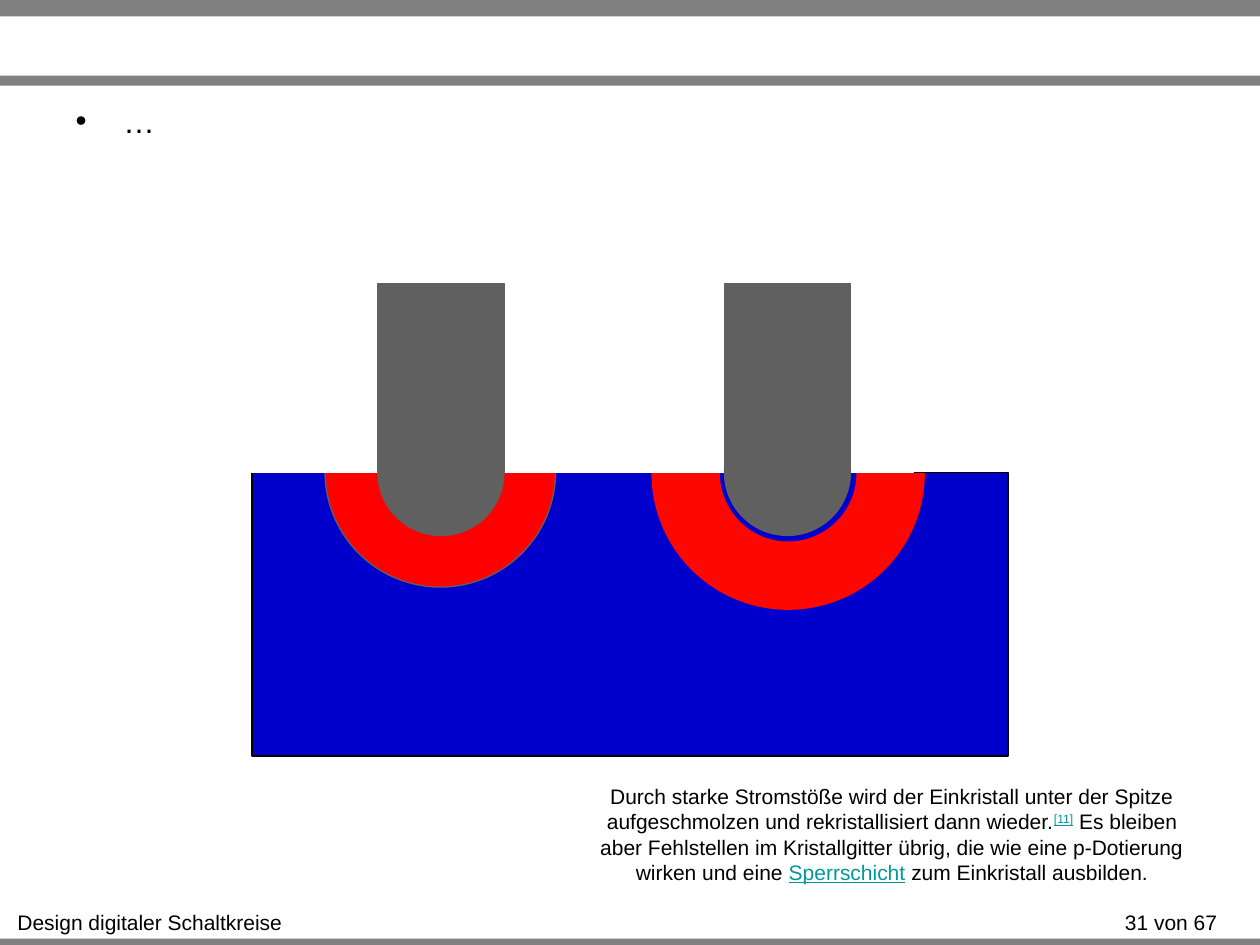
from dataclasses import dataclass

from pptx import Presentation
from pptx import util as u
from pptx.dml.color import RGBColor
from pptx.enum import shapes, text
from pptx.oxml.ns import qn
from lxml import etree

SHAPE = shapes.MSO_SHAPE


@dataclass(frozen=True)
class Theme:
    font: str = "Arial"
    body: int = 18
    small: int = 12
    ink: str = "000000"
    paper: str = "FFFFFF"
    bar: str = "808080"
    crystal: str = "0000CC"
    tip: str = "606060"
    doped: str = "FF0000"
    barrier: str = "FF0701"
    link: str = "009999"


def add_run(p, content, size, color, font, underline=None, baseline=None):
    r = p.add_run()
    r.text = content
    r.font.name, r.font.size = font, u.Pt(size)
    r.font.color.rgb = RGBColor.from_string(color)
    r.font.underline = underline
    if baseline:
        r.font._element.set("baseline", str(baseline * 1000))
    return r


class SlideBuilder:
    """Draw styled elements on one slide."""

    def __init__(self, slide, theme):
        self.s, self.t = slide, theme

    def shape(self, kind, x, y, w, h, fill, line=None, rotation=0):
        sp = self.s.shapes.add_shape(kind, *map(u.Inches, (x, y, w, h)))
        sp.shadow.inherit = False
        sp.rotation = rotation
        sp.fill.solid()
        sp.fill.fore_color.rgb = RGBColor.from_string(fill)
        if line:
            sp.line.color.rgb = RGBColor.from_string(line)
            sp.line.width = u.Pt(0.75)
        else:
            sp.line.fill.background()
        return sp

    def textbox(self, x, y, w, h, runs, wrap=True):
        sp = self.s.shapes.add_textbox(*map(u.Inches, (x, y, w, h)))
        tf = sp.text_frame
        tf.word_wrap = wrap
        tf.auto_size = text.MSO_AUTO_SIZE.SHAPE_TO_FIT_TEXT
        p = tf.paragraphs[0]
        p.alignment = text.PP_ALIGN.CENTER
        for content, style in runs:
            add_run(p, content, **{"size": self.t.small, "color": self.t.ink,
                                   "font": self.t.font, **style})
        return sp

    def body(self, x, y, w, h, content):
        self.s.shapes.title._element.getparent().remove(self.s.shapes.title._element)
        sp = self.s.placeholders[1]
        sp.left, sp.top, sp.width, sp.height = map(u.Inches, (x, y, w, h))
        tf = sp.text_frame
        tf.auto_size = text.MSO_AUTO_SIZE.NONE
        tf.vertical_anchor = text.MSO_ANCHOR.TOP
        p = tf.paragraphs[0]
        p.space_before = u.Pt(0)
        pPr = p._p.get_or_add_pPr()
        pPr.set("marL", str(u.Inches(0.38)))
        pPr.set("indent", str(-u.Inches(0.38)))
        etree.SubElement(pPr, qn("a:buChar")).set("char", "•")
        add_run(p, content, self.t.body, self.t.ink, self.t.font)
        return sp

    def tip(self, x, surface):
        color = self.t.tip
        self.shape(SHAPE.OVAL, x, surface - 0.5, 1, 1, color, color)
        self.shape(SHAPE.RECTANGLE, x, surface - 1.5, 1, 1.5, color, color)


def main():
    prs = Presentation()
    prs.slide_width, prs.slide_height = u.Inches(10), u.Inches(7.5)
    t = Theme()
    b = SlideBuilder(prs.slides.add_slide(prs.slide_layouts[1]), t)

    for y, h in ((7.45, 0.05), (0, 0.13), (0.6, 0.08)):
        b.shape(SHAPE.RECTANGLE, 0, y, 10, h, t.bar)
    b.textbox(0.03, 7.17, 2.32, 0.3, [("Design digitaler Schaltkreise", {})], wrap=False)
    b.textbox(8.83, 7.17, 0.93, 0.3, [("31 von 67", {})], wrap=False)
    b.body(0.5, 0.76, 9, 0.41, "…")

    surface = 3.75
    b.shape(SHAPE.RECTANGLE, 2, surface, 6, 2.25, t.crystal, t.ink)
    b.shape(SHAPE.OVAL, 2.58, surface - 0.92, 1.83, 1.83, t.doped, t.tip)
    b.shape(SHAPE.RECTANGLE, 1.25, surface - 2.25, 6, 2.25, t.paper, t.paper)
    for x in (5.75, 3):
        b.tip(x, surface)
    b.shape(SHAPE.BLOCK_ARC, 5.17, 2.67, 2.17, 2.17, t.barrier, rotation=180)

    link = {"color": t.link, "underline": True}
    b.textbox(4.58, 6.17, 5, 0.91, [
        ("Durch starke Stromstöße wird der Einkristall unter der Spitze "
         "aufgeschmolzen und rekristallisiert dann wieder.", {}),
        ("[11]", {**link, "baseline": 30}),
        (" Es bleiben aber Fehlstellen im Kristallgitter übrig, "
         "die wie eine p-Dotierung wirken und eine ", {}),
        ("Sperrschicht", link),
        (" zum Einkristall ausbilden.", {}),
    ])
    prs.save("out.pptx")


if __name__ == "__main__":
    main()
